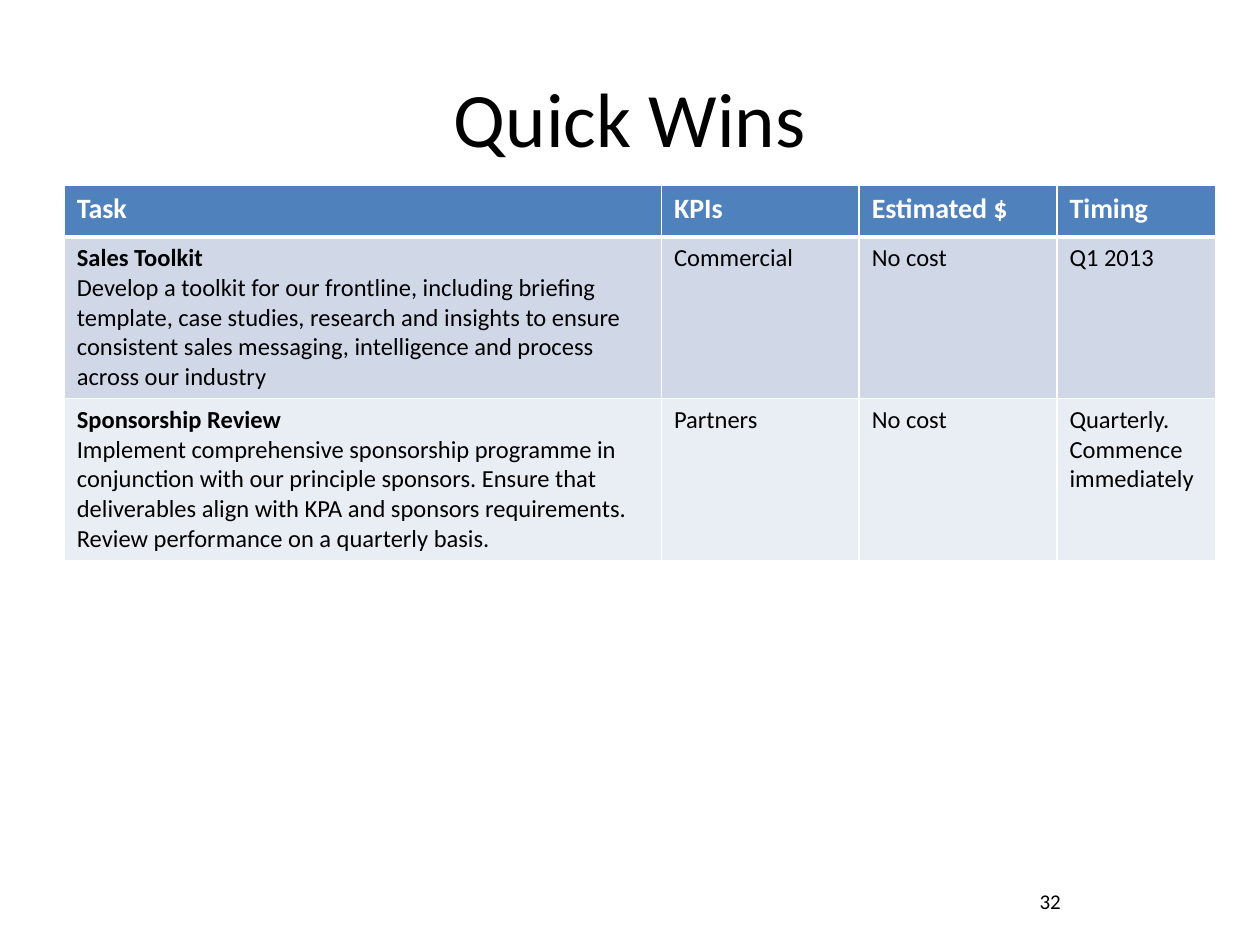
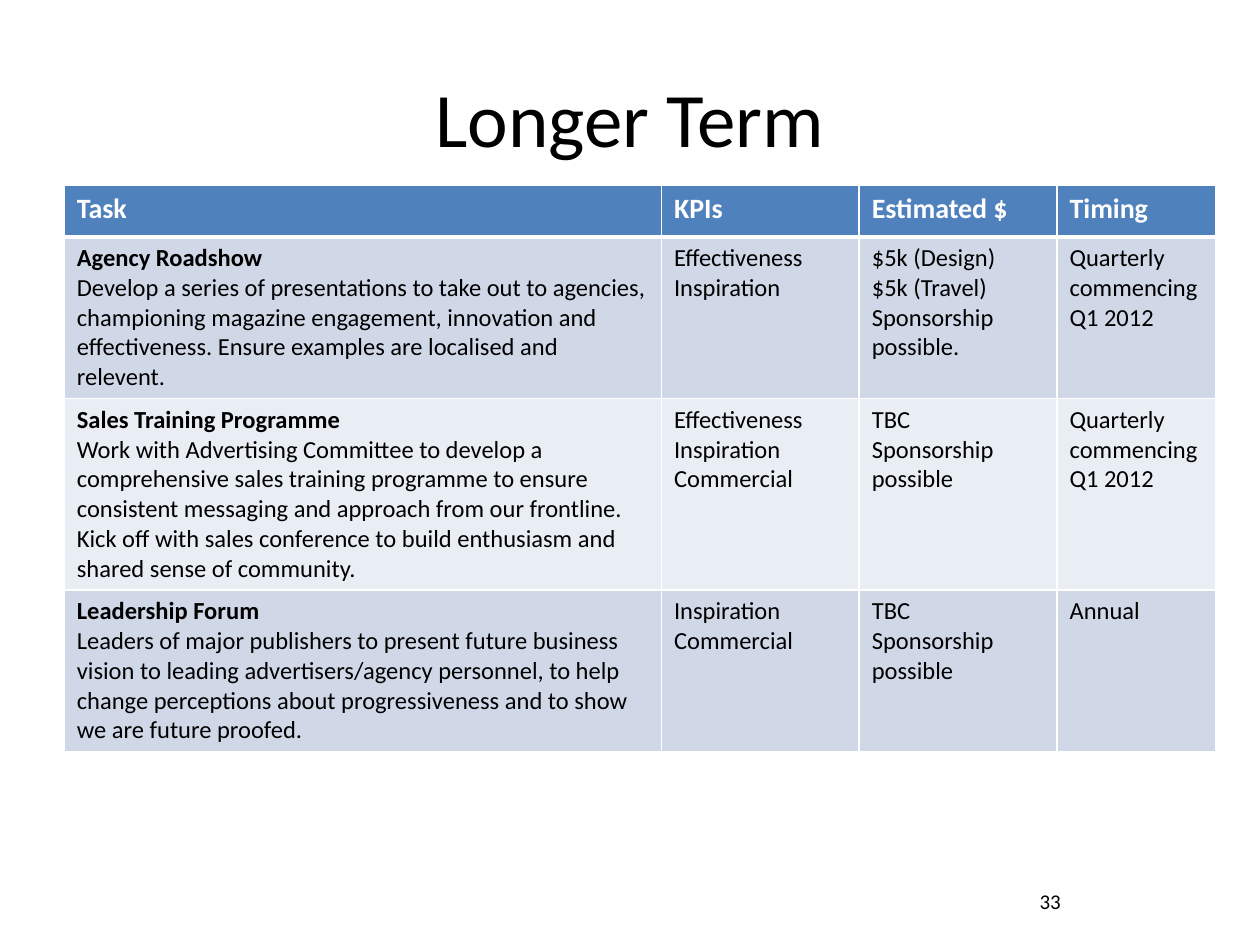
from dataclasses import dataclass

from lxml import etree
from pptx import Presentation
from pptx.dml.color import RGBColor
from pptx.enum.text import MSO_ANCHOR, PP_ALIGN
from pptx.oxml.ns import qn
from pptx.util import Inches, Pt

MIDDLE = MSO_ANCHOR.MIDDLE
CENTER = PP_ALIGN.CENTER
LEFT = PP_ALIGN.LEFT


@dataclass(frozen=True)
class Theme:
    font: str = "Calibri"
    black: str = "000000"
    white: str = "FFFFFF"
    head: str = "4F81BD"
    bands: tuple = ("D0D8E8", "E9EDF4")
    title: int = 44
    label: int = 16
    body: int = 14
    page: int = 12


theme = Theme()


def write(frame, text, size=theme.body, color=theme.black, align=LEFT,
          bold=False, lead=False):
    """Fill a frame, one paragraph a line; lead makes the first line bold."""
    frame.word_wrap = True
    for i, line in enumerate(text.split("\n")):
        para = frame.paragraphs[0] if i == 0 else frame.add_paragraph()
        para.alignment = align
        run = para.add_run()
        run.text = line
        run.font.name = theme.font
        run.font.size = Pt(size)
        run.font.bold = bold or (lead and i == 0)
        run.font.color.rgb = RGBColor.from_string(color)


def edge(cell, side, width):
    """Draw one white cell border."""
    line = etree.SubElement(cell._tc.get_or_add_tcPr(), qn(f"a:ln{side}"),
                            w=str(Pt(width)))
    fill = etree.SubElement(line, qn("a:solidFill"))
    etree.SubElement(fill, qn("a:srgbClr"), val=theme.white)


# Content: title, page, then rows of height and cell texts
heads = ("Task", "KPIs", "Estimated $", "Timing")
widths = (4.74, 1.57, 1.57, 1.26)
plans = [
    ("Quick Wins", "32", [
        (1.26, (
            "Sales Toolkit\nDevelop a toolkit for our frontline, including "
            "briefing template, case studies, research and insights to ensure "
            "consistent sales messaging, intelligence and process across our "
            "industry",
            "Commercial", "No cost", "Q1 2013")),
        (1.26, (
            "Sponsorship Review\nImplement comprehensive sponsorship programme "
            "in conjunction with our principle sponsors. Ensure that "
            "deliverables align with KPA and sponsors requirements. Review "
            "performance on a quarterly basis.",
            "Partners", "No cost", "Quarterly. Commence immediately")),
    ]),
    ("Longer Term", "33", [
        (1.26, (
            "Agency Roadshow\nDevelop a series of presentations to take out to "
            "agencies, championing magazine engagement, innovation and "
            "effectiveness. Ensure examples are localised and relevent.",
            "Effectiveness\nInspiration",
            "$5k (Design)\n$5k (Travel)\nSponsorship possible.",
            "Quarterly commencing Q1 2012")),
        (1.51, (
            "Sales Training Programme\nWork with Advertising Committee to "
            "develop a comprehensive sales training programme to ensure "
            "consistent messaging and approach from our frontline. Kick off "
            "with sales conference to build enthusiasm and shared sense of "
            "community.",
            "Effectiveness\nInspiration\nCommercial",
            "TBC\nSponsorship possible", "Quarterly commencing Q1 2012")),
        (1.26, (
            "Leadership Forum\nLeaders of major publishers to present future "
            "business vision to leading advertisers/agency personnel, to help "
            "change perceptions about progressiveness and to show we are "
            "future proofed.",
            "Inspiration\nCommercial", "TBC\nSponsorship possible", "Annual")),
    ]),
]

deck = Presentation()
deck.slide_width, deck.slide_height = Inches(10), Inches(7.5)

for name, page, tasks in plans:
    slide = deck.slides.add_slide(deck.slide_layouts[5])

    # Title
    title = slide.shapes.title
    title.left, title.top = Inches(0.5), Inches(0.3)
    title.width, title.height = Inches(9), Inches(1.25)
    title.text_frame.vertical_anchor = MIDDLE
    write(title.text_frame, name, size=theme.title, align=CENTER)

    # Task table
    rows = [(0.41, heads)] + tasks
    table = slide.shapes.add_table(
        len(rows), len(heads), Inches(0.51), Inches(1.47),
        Inches(sum(widths)), Inches(sum(row[0] for row in rows))).table
    for col, width in zip(table.columns, widths):
        col.width = Inches(width)
    for r, (height, texts) in enumerate(rows):
        table.rows[r].height = Inches(height)
        for c, text in enumerate(texts):
            cell = table.cell(r, c)
            for side in "LRTB":
                thick = (r, side) in ((0, "B"), (1, "T"))
                edge(cell, side, 3 if thick else 1)
            cell.fill.solid()
            shade = theme.bands[(r - 1) % 2] if r else theme.head
            cell.fill.fore_color.rgb = RGBColor.from_string(shade)
            if r == 0:
                write(cell.text_frame, text, size=theme.label,
                      color=theme.white, bold=True)
            else:
                write(cell.text_frame, text, lead=c == 0)

    # Page number
    box = slide.shapes.add_textbox(Inches(7.17), Inches(6.95),
                                   Inches(2.33), Inches(0.4))
    box.text_frame.vertical_anchor = MIDDLE
    write(box.text_frame, page, size=theme.page, align=CENTER)

deck.save("out.pptx")
